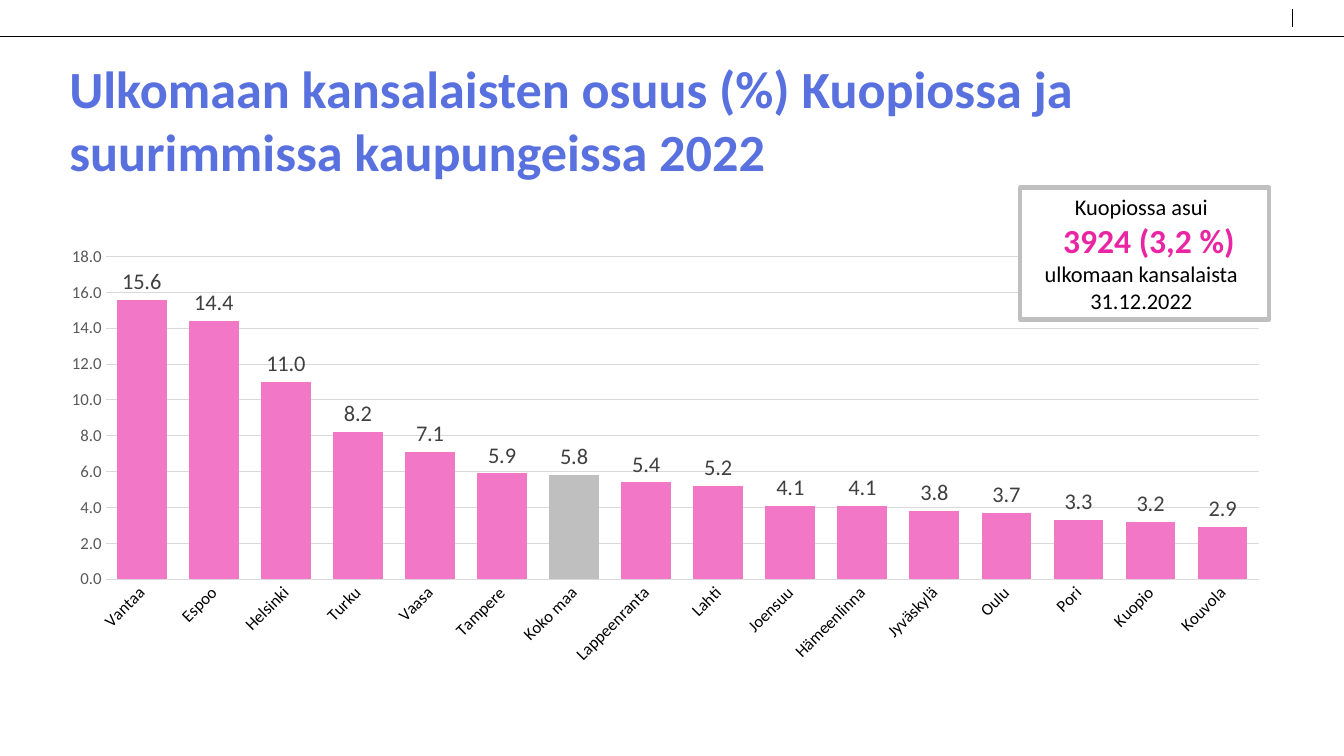
from lxml import etree
from pptx import Presentation
from pptx.chart.data import CategoryChartData
from pptx.dml.color import RGBColor
from pptx.enum.chart import XL_CHART_TYPE, XL_LABEL_POSITION, XL_TICK_MARK
from pptx.enum.shapes import MSO_CONNECTOR, MSO_SHAPE
from pptx.enum.text import MSO_ANCHOR, PP_ALIGN
from pptx.oxml import parse_xml
from pptx.oxml.ns import nsdecls, qn
from pptx.util import Inches, Pt

COLUMNS = XL_CHART_TYPE.COLUMN_CLUSTERED
OUTSIDE_END = XL_LABEL_POSITION.OUTSIDE_END
NO_TICK = XL_TICK_MARK.NONE
STRAIGHT = MSO_CONNECTOR.STRAIGHT
RECTANGLE = MSO_SHAPE.RECTANGLE
BOTTOM, MIDDLE = MSO_ANCHOR.BOTTOM, MSO_ANCHOR.MIDDLE
LEFT, CENTER = PP_ALIGN.LEFT, PP_ALIGN.CENTER

FONT = "Calibri"
BLACK, WHITE = "000000", "FFFFFF"
BLUE, PINK, MAGENTA = "5971DF", "F277C6", "EA25A3"
GRAY, GRID = "BFBFBF", "D9D9D9"

SHARES = {
    "Vantaa": 15.6, "Espoo": 14.4, "Helsinki": 11.0, "Turku": 8.2,
    "Vaasa": 7.1, "Tampere": 5.9, "Koko maa": 5.8, "Lappeenranta": 5.4,
    "Lahti": 5.2, "Joensuu": 4.1, "Hämeenlinna": 4.1, "Jyväskylä": 3.8,
    "Oulu": 3.7, "Pori": 3.3, "Kuopio": 3.2, "Kouvola": 2.9,
}
PLOT = {"x": 0.056, "y": 0.087, "w": 0.904, "h": 0.625}


def rgb(value):
    return RGBColor.from_string(value)


def set_font(font, size, color, bold=False):
    for name, value in {"name": FONT, "size": Pt(size), "bold": bold}.items():
        setattr(font, name, value)
    font.color.rgb = rgb(color)


def set_line(line, color, width):
    line.color.rgb = rgb(color)
    line.width = Pt(width)


def set_fill(fill, color):
    fill.solid()
    fill.fore_color.rgb = rgb(color)


def add_rule(s, x1, y1, x2, y2):
    sp = s.shapes.add_connector(STRAIGHT, *map(Inches, (x1, y1, x2, y2)))
    set_line(sp.line, BLACK, 0.5)
    etree.SubElement(sp._element.spPr, qn("a:effectLst"))


def write(tf, lines, anchor, align):
    tf.word_wrap = True
    tf.vertical_anchor = anchor
    for i, (text, size, color, bold, margins) in enumerate(lines):
        p = tf.add_paragraph() if i else tf.paragraphs[0]
        p.alignment = align
        for side, width in margins.items():
            p._p.get_or_add_pPr().set(side, str(Inches(width)))
        r = p.add_run()
        r.text = text
        set_font(r.font, size, color, bold)


def add_title(s, text):
    sp = s.shapes.add_textbox(*map(Inches, (0.59, 0.6, 12, 1.25)))
    write(sp.text_frame, [(text, 37.3, BLUE, True, {})], BOTTOM, LEFT)


def add_callout(s, lines):
    sp = s.shapes.add_shape(RECTANGLE, *map(Inches, (10.12, 1.86, 2.47, 1.31)))
    sp.shadow.inherit = False
    set_fill(sp.fill, WHITE)
    set_line(sp.line, GRAY, 3)
    write(sp.text_frame, lines, MIDDLE, CENTER)


def format_axes(chart):
    cat, val = chart.category_axis, chart.value_axis
    for axis, color in ((cat, BLACK), (val, "595959")):
        axis.major_tick_mark = axis.minor_tick_mark = NO_TICK
        set_font(axis.tick_labels.font, 12, color)
    set_line(cat.format.line, GRID, 0.75)
    cat._element.txPr.find(qn("a:bodyPr")).set("rot", "-2700000")
    limits = {"minimum_scale": 0, "maximum_scale": 18, "major_unit": 2}
    for name, value in limits.items():
        setattr(val, name, value)
    val.format.line.fill.background()
    set_line(val.major_gridlines.format.line, GRID, 0.75)
    val.tick_labels.number_format = "0.0"
    val.tick_labels.number_format_is_linked = False


def set_plot_area(chart):
    area = chart._chartSpace.chart.plotArea
    for old in area.findall(qn("c:layout")):
        area.remove(old)
    modes = "".join(f'<c:{k}Mode val="edge"/>' for k in "xy")
    sizes = "".join(f'<c:{k} val="{v}"/>' for k, v in PLOT.items())
    area.insert(0, parse_xml(
        f'<c:layout {nsdecls("c")}><c:manualLayout>'
        f'<c:layoutTarget val="inner"/>{modes}{sizes}'
        '</c:manualLayout></c:layout>'))


def add_share_chart(s):
    data = CategoryChartData(number_format="0.0")
    data.categories = list(SHARES)
    data.add_series("Series 1", list(SHARES.values()))
    place = map(Inches, (0.34, 2.1, 12.65, 5.12))
    chart = s.shapes.add_chart(COLUMNS, *place, data).chart
    chart.has_title = chart.has_legend = False
    set_font(chart.font, 16, BLACK)
    format_axes(chart)
    set_plot_area(chart)
    plot = chart.plots[0]
    plot.gap_width = 45
    plot.vary_by_categories = False
    series = plot.series[0]
    set_fill(series.format.fill, PINK)
    country = list(SHARES).index("Koko maa")
    set_fill(series.points[country].format.fill, GRAY)
    labels = series.data_labels
    formats = {"show_value": True, "position": OUTSIDE_END,
               "number_format": "0.0", "number_format_is_linked": False}
    for name, value in formats.items():
        setattr(labels, name, value)
    set_font(labels.font, 16, "404040")


def main():
    prs = Presentation()
    prs.slide_width, prs.slide_height = Inches(13.33), Inches(7.5)
    s = prs.slides.add_slide(prs.slide_layouts[6])
    add_rule(s, 0, 0.36, 13.33, 0.36)
    add_rule(s, 12.82, 0.27, 12.82, 0.09)
    add_title(s, "Ulkomaan kansalaisten osuus (%) Kuopiossa ja "
                 "suurimmissa kaupungeissa 2022")
    add_share_chart(s)
    add_callout(s, [
        ("Kuopiossa asui", 16, BLACK, False, {"marR": 0.07}),
        ("3924 (3,2 %)", 24, MAGENTA, True, {"marL": 0.15}),
        ("ulkomaan kansalaista", 16, BLACK, False, {}),
        ("31.12.2022", 16, BLACK, False, {}),
    ])
    prs.save("out.pptx")


if __name__ == "__main__":
    main()
